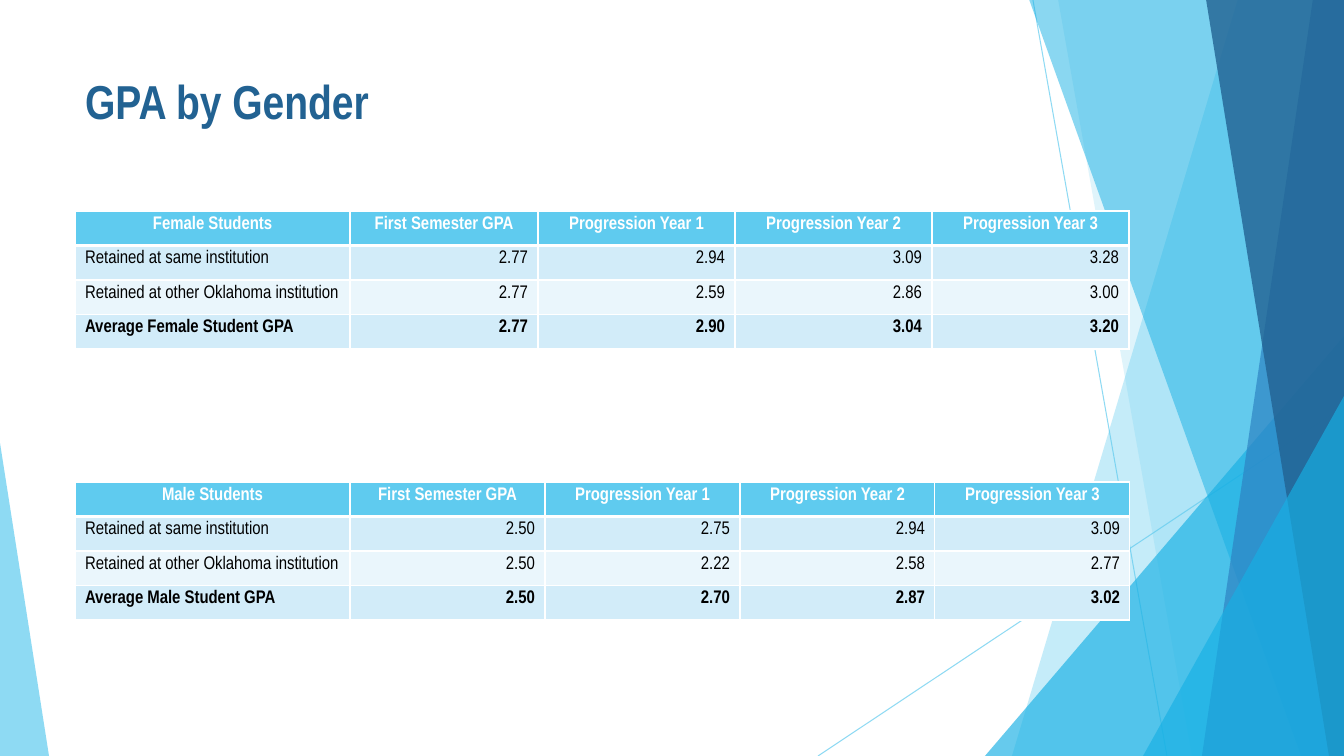
import pptx
import pptx.dml.color
import pptx.enum.shapes
import pptx.enum.text
import pptx.oxml
import pptx.oxml.ns
import pptx.util
from lxml import etree

SCALE = 914400 / 100.8
WIDTH, HEIGHT = 1344, 756
COLOURS = {
    "sky": "5FCBEF",
    "cyan": "17B0E4",
    "blue": "2E83C3",
    "navy": "226292",
    "band": "D2ECF9",
    "pale": "EAF6FC",
    "white": "FFFFFF",
    "black": "000000",
}
ALIGN = pptx.enum.text.PP_ALIGN
HEADINGS = ["First Semester GPA", "Progression Year 1", "Progression Year 2", "Progression Year 3"]
FEMALE_GPA = [
    ["Female Students", *HEADINGS],
    ["Retained at same institution", "2.77", "2.94", "3.09", "3.28"],
    ["Retained at other Oklahoma institution", "2.77", "2.59", "2.86", "3.00"],
    ["Average Female Student GPA", "2.77", "2.90", "3.04", "3.20"],
]
MALE_GPA = [
    ["Male Students", *HEADINGS],
    ["Retained at same institution", "2.50", "2.75", "2.94", "3.09"],
    ["Retained at other Oklahoma institution", "2.50", "2.22", "2.58", "2.77"],
    ["Average Male Student GPA", "2.50", "2.70", "2.87", "3.02"],
]


def px(length):
    return pptx.util.Emu(round(length * SCALE))


def rgb(name):
    return pptx.dml.color.RGBColor.from_string(COLOURS[name])


class GpaSlide:
    """Draws the elements of the current slide in one shared style."""

    font = "Arial Narrow"

    def __init__(self, deck):
        self.page = deck.slides.add_slide(deck.slide_layouts[5])

    def style_text(self, para, size, colour, bold, align):
        para.alignment = align
        para.font.name = self.font
        para.font.size = pptx.util.Pt(size)
        para.font.bold = bold
        para.font.color.rgb = rgb(colour)

    def set_opacity(self, shape, percent):
        colour = shape.element.spPr.find(".//" + pptx.oxml.ns.qn("a:srgbClr"))
        etree.SubElement(colour, pptx.oxml.ns.qn("a:alpha"), val=str(percent * 1000))

    def paint(self, shape, colour, opacity):
        shape.shadow.inherit = False
        shape.line.fill.background()
        shape.fill.solid()
        shape.fill.fore_color.rgb = rgb(colour)
        self.set_opacity(shape, opacity)

    def line(self, x1, y1, x2, y2):
        line = self.page.shapes.add_connector(
            pptx.enum.shapes.MSO_CONNECTOR.STRAIGHT, px(x1), px(y1), px(x2), px(y2))
        line.line.color.rgb = rgb("sky")
        line.line.width = pptx.util.Pt(0.75)
        self.set_opacity(line, 70)
        etree.SubElement(line.element.spPr, pptx.oxml.ns.qn("a:effectLst"))

    def facet(self, top_x, bottom_x, colour, opacity):
        builder = self.page.shapes.build_freeform(top_x, -1, scale=SCALE)
        builder.add_line_segments([(WIDTH, -1), (WIDTH, HEIGHT), (bottom_x, HEIGHT)], close=True)
        self.paint(builder.convert_to_shape(), colour, opacity)

    def triangle(self, left, top, width, apex, colour, opacity):
        shape = self.page.shapes.add_shape(
            pptx.enum.shapes.MSO_SHAPE.ISOSCELES_TRIANGLE,
            px(left), px(top), px(width), px(HEIGHT - top))
        shape.adjustments[0] = apex
        self.paint(shape, colour, opacity)

    def title(self, text, left, top, width, height):
        box = self.page.shapes.title
        box.left, box.top, box.width, box.height = px(left), px(top), px(width), px(height)
        box.element.getparent().append(box.element)
        frame = box.text_frame
        frame.text = text
        frame.word_wrap = True
        frame.auto_size = pptx.enum.text.MSO_AUTO_SIZE.NONE
        frame.vertical_anchor = pptx.enum.text.MSO_ANCHOR.TOP
        self.style_text(frame.paragraphs[0], 34, "navy", True, ALIGN.LEFT)

    def borders(self, cell, row):
        points = {"L": 1, "R": 1, "T": 3 if row == 1 else 1, "B": 3 if row == 0 else 1}
        properties = cell._tc.get_or_add_tcPr()
        for side, width in points.items():
            properties.append(pptx.oxml.parse_xml(
                f'<a:ln{side} {pptx.oxml.ns.nsdecls("a")} w="{width * 12700}"><a:solidFill>'
                f'<a:srgbClr val="{COLOURS["white"]}"/></a:solidFill></a:ln{side}>'))

    def table(self, rows, left, top, widths, height):
        table = self.page.shapes.add_table(
            len(rows), len(widths), px(left), px(top), px(sum(widths)), px(height)).table
        for column, width in zip(table.columns, widths):
            column.width = px(width)
        for r, values in enumerate(rows):
            header = r == 0
            fill = "sky" if header else "band" if r % 2 else "pale"
            for c, value in enumerate(values):
                cell = table.cell(r, c)
                self.borders(cell, r)
                cell.fill.solid()
                cell.fill.fore_color.rgb = rgb(fill)
                cell.margin_top = cell.margin_bottom = px(5)
                cell.text = value
                align = ALIGN.CENTER if header else ALIGN.RIGHT if c else ALIGN.LEFT
                self.style_text(cell.text_frame.paragraphs[0], 13,
                                "white" if header else "black",
                                header or r == len(rows) - 1, align)


def main():
    deck = pptx.Presentation()
    deck.slide_width, deck.slide_height = px(WIDTH), px(HEIGHT)
    slide = GpaSlide(deck)
    slide.line(1033, 0, 1167, HEIGHT)
    slide.line(WIDTH, 406, 818, HEIGHT)
    slide.facet(1238, 1012, "sky", 36)
    slide.facet(1058, 1192, "sky", 20)
    slide.triangle(985, 336, 359, 1, "cyan", 66)
    slide.facet(1029, 1301, "cyan", 50)
    slide.facet(1313, 1202, "blue", 70)
    slide.facet(1206, 1329, "navy", 80)
    slide.triangle(1143, 396, 201, 1, "cyan", 66)
    slide.triangle(0, 443, 49, 0, "sky", 70)
    slide.title("GPA by Gender", 75, 67, 948, 145)
    slide.table(FEMALE_GPA, 75, 211, [275, 188] + [197] * 3, 138)
    slide.table(MALE_GPA, 75, 482, [275] + [195] * 4, 138)
    deck.save("out.pptx")


if __name__ == "__main__":
    main()
